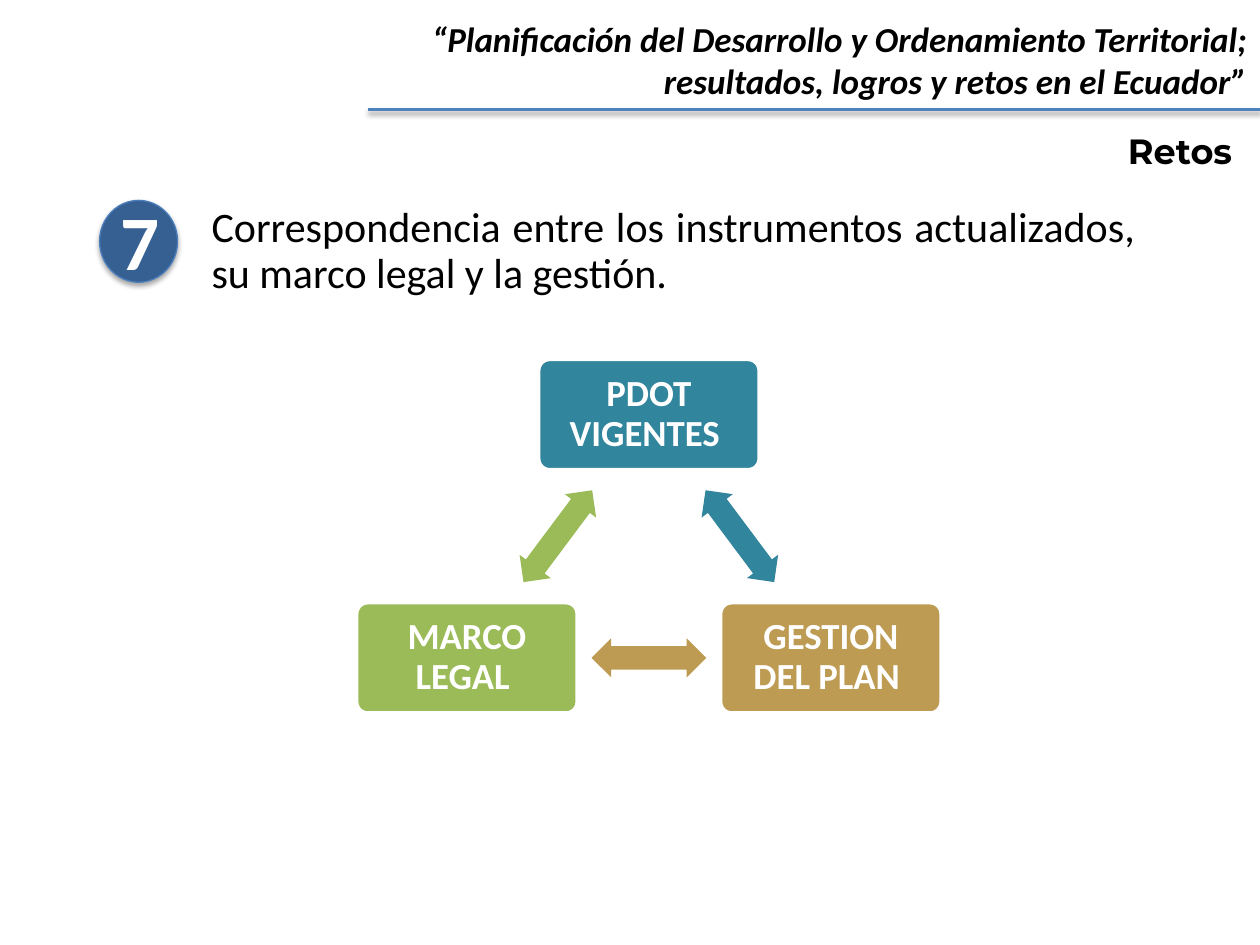
import math
from lxml import etree
from pptx import Presentation
from pptx.dml.color import RGBColor
from pptx.enum import shapes, text
from pptx.oxml import parse_xml
from pptx.util import Pt

NS = "http://schemas.openxmlformats.org/drawingml/2006/main"
SHAPE = shapes.MSO_SHAPE
ALIGN = text.PP_ALIGN
BLACK, WHITE, BLUE = "000000", "FFFFFF", "4F81BD"
TEAL, TAN, GREEN = "31859C", "BD9B53", "9BBB59"


def paint(color, code):
    color.rgb = RGBColor.from_string(code)


def shade(alpha):
    """Return the effect list of a soft shadow that falls straight down."""
    return parse_xml(
        f'<a:effectLst xmlns:a="{NS}"><a:outerShdw blurRad="{Pt(3.1)}" '
        f'dist="{Pt(1.7)}" dir="5400000" rotWithShape="0">'
        f'<a:srgbClr val="{BLACK}"><a:alpha val="{alpha * 1000}"/></a:srgbClr>'
        '</a:outerShdw></a:effectLst>')


def write(shape, lines, size, color=BLACK, font="Calibri", bold=False,
          italic=False, align=ALIGN.LEFT, space=1.0, anchor="TOP",
          inset=(7.2, 3.6), glow=None):
    """Fill a shape with one paragraph per line; inset is (side, top)."""
    frame = shape.text_frame
    frame.word_wrap = True
    frame.vertical_anchor = getattr(text.MSO_ANCHOR, anchor)
    frame.margin_left = frame.margin_right = Pt(inset[0])
    frame.margin_top = frame.margin_bottom = Pt(inset[1])
    for i, line in enumerate(lines):
        para = frame.add_paragraph() if i else frame.paragraphs[0]
        para.alignment = align
        para.line_spacing = space
        run = para.add_run()
        run.text = line
        face = run.font
        face.size, face.name = Pt(size), font
        face.bold, face.italic = bold, italic
        paint(face.color, color)
        if glow:
            fill = run._r.get_or_add_rPr().find(f"{{{NS}}}solidFill")
            fill.addnext(shade(glow))


def label(slide, box, lines, size, **form):
    write(slide.shapes.add_textbox(*map(Pt, box)), lines, size, **form)


def draw(slide, kind, box, fill, line=None, width=0):
    shape = slide.shapes.add_shape(kind, *map(Pt, box))
    shape.shadow.inherit = False
    shape.fill.solid()
    paint(shape.fill.fore_color, fill)
    if line:
        paint(shape.line.color, line)
        shape.line.width = Pt(width)
    else:
        shape.line.fill.background()
    return shape


def header(slide, x, y, w, h):
    label(slide, (x, y, w, h),
          ["“Planificación del Desarrollo y Ordenamiento Territorial;",
           "resultados, logros y retos en el Ecuador”"],
          20, bold=True, italic=True, align=ALIGN.RIGHT)
    base = Pt(y + h + 0.7)
    rule = slide.shapes.add_connector(
        shapes.MSO_CONNECTOR.STRAIGHT, Pt(x + 89.3), base, Pt(x + w), base)
    paint(rule.line.color, BLUE)
    rule.line.width = Pt(2)
    rule._element.spPr.append(shade(38))


def heading(slide, *box):
    label(slide, box, ["Retos "], 20, font="Montserrat", bold=True,
          align=ALIGN.CENTER, anchor="MIDDLE", glow=40)


def point(slide, x, y, w, h):
    """Place the numbered badge and its sentence."""
    badge = draw(slide, SHAPE.OVAL, (x, y, 44.6, 46.8), "376092", "4B7EBC", 0.75)
    spec_list = badge._element.spPr.find(f"{{{NS}}}effectLst")
    spec_list.getparent().replace(spec_list, shade(35))
    label(slide, (x + 5, y - 7.2, 34, 60.5), ["7"], 44, color=WHITE, bold=True)
    label(slide, (x + 56.9, y, w - 56.9, h),
          ["Correspondencia entre los instrumentos actualizados, "
           "su marco legal y la gestión."],
          24, align=ALIGN.JUSTIFY, space=0.9)


def cycle(slide, x, y, w, h):
    """Place three nodes in a triangle, joined by double arrows."""
    wide, high = 126, 63
    low = y + h - high / 2
    nodes = [("PDOT VIGENTES ", TEAL, x + w / 2, y + high / 2),
             ("GESTION DEL PLAN ", TAN, x + w - wide / 2, low),
             ("MARCO LEGAL ", GREEN, x + wide / 2, low)]
    for i, (name, fill, cx, cy) in enumerate(nodes):
        node = draw(slide, SHAPE.ROUNDED_RECTANGLE,
                    (cx - wide / 2, cy - high / 2, wide, high), fill, WHITE, 2)
        node.adjustments[0] = 0.1
        write(node, [name], 21, color=WHITE, bold=True, align=ALIGN.CENTER,
              space=0.9, anchor="MIDDLE", inset=(8.3, 8.3))
        nx, ny = nodes[(i + 1) % len(nodes)][2:]
        long, thick = 65.5, 22.3
        arrow = draw(slide, SHAPE.LEFT_RIGHT_ARROW,
                     ((cx + nx - long) / 2, (cy + ny - thick) / 2, long, thick),
                     fill)
        arrow.adjustments[0], arrow.adjustments[1] = 0.6, 0.5
        arrow.rotation = math.degrees(math.atan2(ny - cy, nx - cx)) % 360


def main():
    deck = Presentation()
    deck.slide_width, deck.slide_height = Pt(720), Pt(540)
    slide = deck.slides.add_slide(deck.slide_layouts[6])
    heading(slide, 598.3, 64.1, 157.7, 43.9)
    header(slide, 121, 6.5, 599, 55.4)
    point(slide, 56.9, 114.5, 599, 59.8)
    cycle(slide, 203.8, 205.4, 334, 202)
    deck.save("out.pptx")


if __name__ == "__main__":
    main()
